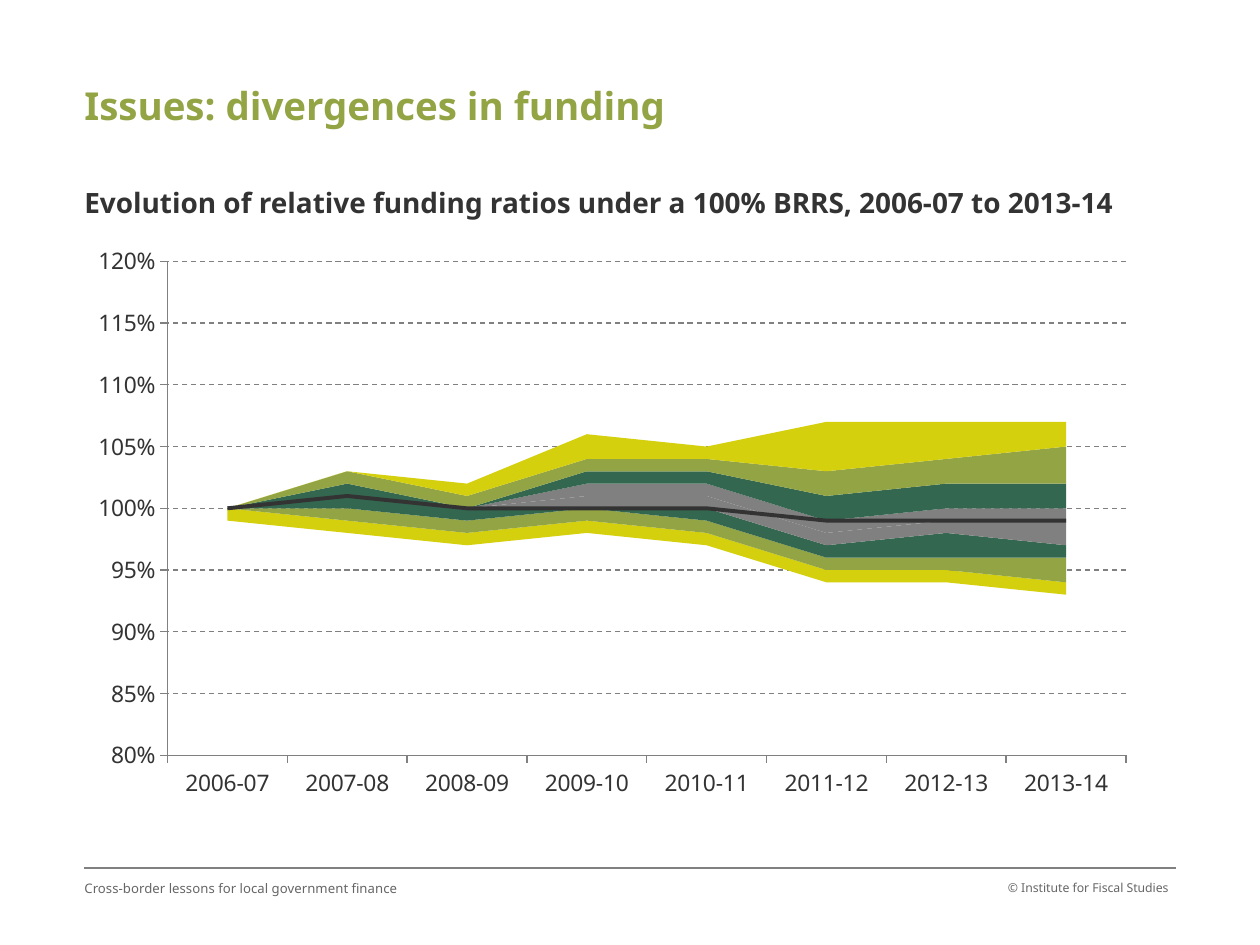
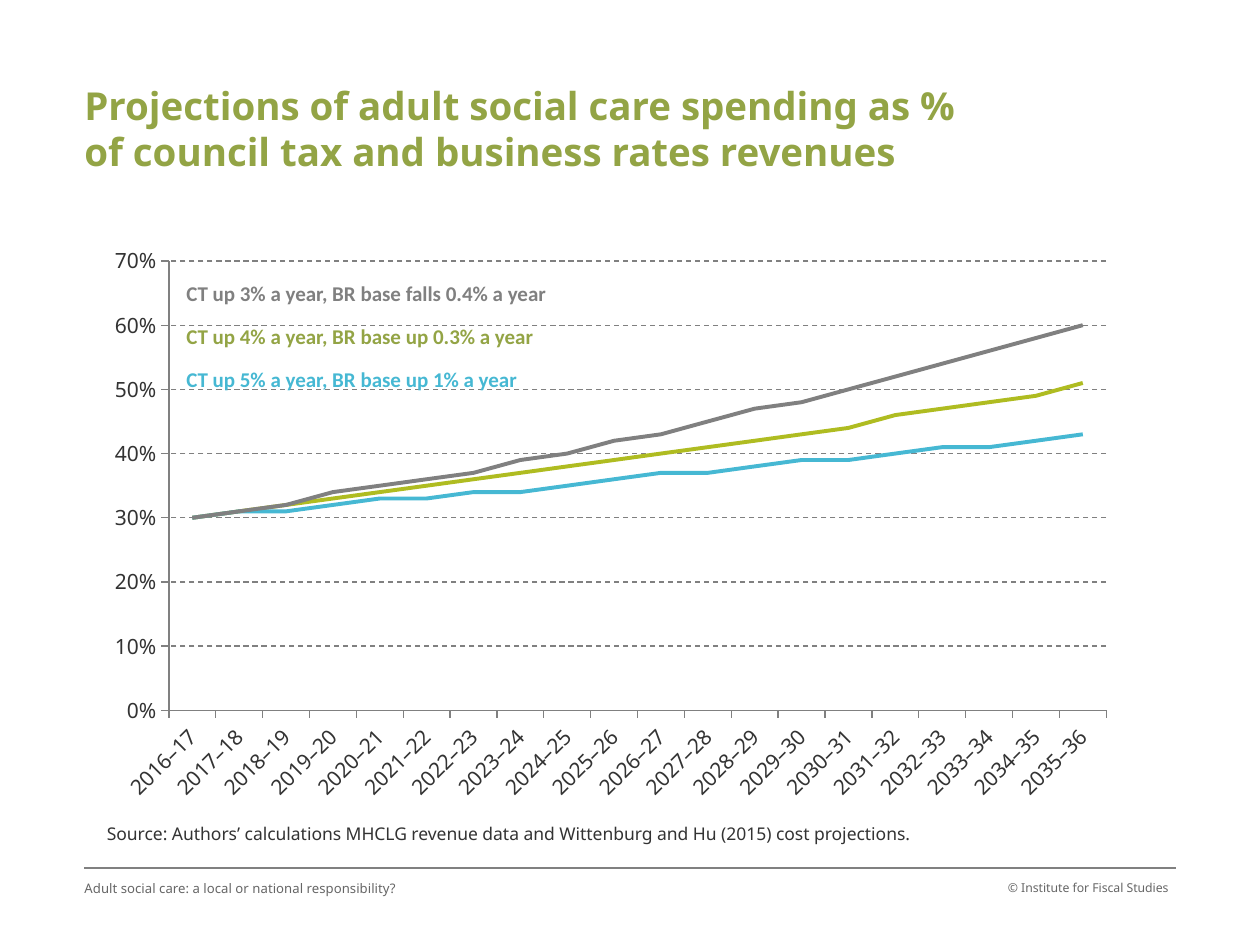
from lxml import etree
from pptx import Presentation
from pptx.chart.data import CategoryChartData
from pptx.dml.color import RGBColor
from pptx.enum.chart import XL_CHART_TYPE, XL_MARKER_STYLE, XL_TICK_MARK
from pptx.enum.dml import MSO_LINE
from pptx.enum.shapes import MSO_CONNECTOR
from pptx.enum.text import MSO_ANCHOR, PP_ALIGN
from pptx.oxml import parse_xml
from pptx.oxml.ns import nsdecls, qn
from pptx.util import Pt

AREA, LINE = XL_CHART_TYPE.AREA_STACKED, XL_CHART_TYPE.LINE
NO_MARKER = XL_MARKER_STYLE.NONE
TICK_OUT = XL_TICK_MARK.OUTSIDE
DASH = MSO_LINE.DASH
STRAIGHT = MSO_CONNECTOR.STRAIGHT
TOP = MSO_ANCHOR.TOP
LEFT, RIGHT = PP_ALIGN.LEFT, PP_ALIGN.RIGHT

OLIVE = RGBColor(0x93, 0xA4, 0x45)
YELLOW = RGBColor(0xD4, 0xD0, 0x0E)
FOREST = RGBColor(0x33, 0x67, 0x50)
GREY = RGBColor(0x80, 0x80, 0x80)
LIME = RGBColor(0xAF, 0xBC, 0x21)
BLUE = RGBColor(0x46, 0xB8, 0xD3)
INK = RGBColor(0x33, 0x33, 0x33)
FOOTER_INK = RGBColor(0x66, 0x66, 0x66)

FONT, KEY_FONT = "Noto Sans", "Calibri"
PAGE_WIDTH, PAGE_HEIGHT = 720, 540
MARGIN = 48.24
CONTENT_WIDTH = PAGE_WIDTH - 2 * MARGIN
NO_INSETS = (0, 0, 0, 0)
BOX_INSETS = (7.2, 3.6, 7.2, 3.6)
SERIES_WEIGHT = 2.25

FUNDING_YEARS = [f"{year}-{(year + 1) % 100:02d}" for year in range(2006, 2014)]
FUNDING_BANDS = [
    (None, [0.99, 0.98, 0.97, 0.98, 0.97, 0.94, 0.94, 0.93]),
    (YELLOW, [0.01] * 8),
    (OLIVE, [0, 0.01, 0.01, 0.01, 0.01, 0.01, 0.01, 0.02]),
    (FOREST, [0, 0.01, 0.01, 0, 0.01, 0.01, 0.02, 0.01]),
    (GREY, [0, 0, 0, 0.01, 0.01, 0.01, 0.01, 0.02]),
    (GREY, [0, 0, 0, 0.01, 0.01, 0.01, 0.01, 0.01]),
    (FOREST, [0, 0.01, 0, 0.01, 0.01, 0.02, 0.02, 0.02]),
    (OLIVE, [0, 0.01, 0.01, 0.01, 0.01, 0.02, 0.02, 0.03]),
    (YELLOW, [0, 0, 0.01, 0.02, 0.01, 0.04, 0.03, 0.02]),
]
FUNDING_MEDIAN = (INK, [1, 1.01, 1, 1, 1, 0.99, 0.99, 0.99])

CARE_YEARS = [f"{year}–{(year + 1) % 100:02d}" for year in range(2016, 2036)]
CARE_PROJECTIONS = [
    (LIME, [0.3, 0.31, 0.32, 0.33, 0.34, 0.35, 0.36, 0.37, 0.38, 0.39,
            0.4, 0.41, 0.42, 0.43, 0.44, 0.46, 0.47, 0.48, 0.49, 0.51]),
    (BLUE, [0.3, 0.31, 0.31, 0.32, 0.33, 0.33, 0.34, 0.34, 0.35, 0.36,
            0.37, 0.37, 0.38, 0.39, 0.39, 0.4, 0.41, 0.41, 0.42, 0.43]),
    (GREY, [0.3, 0.31, 0.32, 0.34, 0.35, 0.36, 0.37, 0.39, 0.4, 0.42,
            0.43, 0.45, 0.47, 0.48, 0.5, 0.52, 0.54, 0.56, 0.58, 0.6]),
]
CARE_KEY = [
    ("CT up 3% a year, BR base falls 0.4% a year", GREY),
    ("CT up 4% a year, BR base up 0.3% a year", OLIVE),
    ("CT up 5% a year, BR base up 1% a year", BLUE),
]


def add_text(page, box, lines, size=10, font=FONT, bold=False, align=LEFT,
             insets=NO_INSETS, space_after=0):
    """Write (text, colour) lines as paragraphs in a text box."""
    frame = page.shapes.add_textbox(*map(Pt, box)).text_frame
    frame.word_wrap = True
    frame.vertical_anchor = TOP
    (frame.margin_left, frame.margin_top,
     frame.margin_right, frame.margin_bottom) = map(Pt, insets)
    for index, (text, colour) in enumerate(lines):
        para = frame.add_paragraph() if index else frame.paragraphs[0]
        para.alignment = align
        para.space_after = Pt(space_after)
        span = para.add_run()
        span.text = text
        span.font.name, span.font.size, span.font.bold = font, Pt(size), bold
        span.font.color.rgb = colour


def add_footer(page, box, text):
    """Draw the rule with the talk title and copyright line below it."""
    left, top, width, height = box
    rule = page.shapes.add_connector(STRAIGHT, Pt(left), Pt(top), Pt(left + width), Pt(top))
    rule.line.color.rgb = GREY
    rule.line.width = Pt(0.75)
    etree.SubElement(rule._element.spPr, qn("a:effectLst"))
    text_top, text_height = top + 7.2, height - 7.2
    add_text(page, (left, text_top, 228, text_height), [(text, FOOTER_INK)], size=7.5)
    add_text(page, (left + width - 125, text_top, 125, text_height),
             [("© Institute for Fiscal Studies", FOOTER_INK)],
             size=7, align=RIGHT, insets=(0, 0, 4, 0))


def add_page(deck, title, footer):
    """Add a blank page with its title and footer."""
    page = deck.slides.add_slide(deck.slide_layouts[6])
    add_text(page, (MARGIN, 46.8, 515, 32), [(title, OLIVE)], size=22, bold=True)
    add_footer(page, (MARGIN, 496, CONTENT_WIDTH, 36), footer)
    return page


def place_points_between_ticks(values_axis):
    """Centre each category between two tick marks."""
    element = values_axis._element
    for crossing in element.findall(qn("c:crossBetween")):
        element.remove(crossing)
    element.find(qn("c:majorUnit")).addprevious(
        parse_xml(f'<c:crossBetween {nsdecls("c")} val="between"/>'))


def add_percent_chart(page, box, kind, years, rows, size, scale, plot_box):
    """Add a chart with a dashed percentage grid and a fixed plot area."""
    data = CategoryChartData(number_format="0%")
    data.categories = years
    for number, (_, values) in enumerate(rows, 1):
        data.add_series(f"Series {number}", values)
    chart = page.shapes.add_chart(kind, *map(Pt, box), data).chart
    chart.has_legend = chart.has_title = False
    chart.font.name, chart.font.size = FONT, Pt(size)
    chart.font.color.rgb = INK
    chart.plots[0].vary_by_categories = False

    values_axis, years_axis = chart.value_axis, chart.category_axis
    values_axis.minimum_scale, values_axis.maximum_scale, values_axis.major_unit = scale
    values_axis.tick_labels.number_format = "0%"
    values_axis.tick_labels.number_format_is_linked = False
    values_axis.has_major_gridlines = True
    years_axis.has_major_gridlines = False
    for axis in (values_axis, years_axis):
        axis.major_tick_mark = TICK_OUT
    grid = values_axis.major_gridlines
    for part in (values_axis, years_axis, grid):
        part.format.line.color.rgb = GREY
        part.format.line.width = Pt(0.75)
    grid.format.line.dash_style = DASH
    place_points_between_ticks(values_axis)

    plot_area = chart._chartSpace.chart.plotArea
    for layout in plot_area.findall(qn("c:layout")):
        plot_area.remove(layout)
    modes = "".join(f'<c:{name}Mode val="edge"/>' for name in "xy")
    sizes = "".join(f'<c:{name} val="{value}"/>' for name, value in zip("xywh", plot_box))
    plot_area.insert(0, parse_xml(
        f'<c:layout {nsdecls("c")}><c:manualLayout><c:layoutTarget val="inner"/>'
        f'{modes}{sizes}</c:manualLayout></c:layout>'))
    return chart


def style_line(series, colour):
    """Draw a series as a plain straight line."""
    series.smooth = False
    series.marker.style = NO_MARKER
    series.format.line.color.rgb = colour
    series.format.line.width = Pt(SERIES_WEIGHT)


def move_last_series_to_line(chart):
    """Turn the last area series into a line on the same axes."""
    area = chart.plots[0]._element
    line = parse_xml(f'<c:lineChart {nsdecls("c")}><c:grouping val="standard"/>'
                     '<c:varyColors val="0"/><c:marker val="1"/></c:lineChart>')
    line.insert(2, area.findall(qn("c:ser"))[-1])
    for axis_id in area.findall(qn("c:axId")):
        etree.SubElement(line, qn("c:axId")).set("val", axis_id.get("val"))
    area.addnext(line)
    return chart.plots[1].series[0]


def add_funding_chart(page, box):
    """Show the funding bands with the median line over them."""
    chart = add_percent_chart(page, box, AREA, FUNDING_YEARS,
                              FUNDING_BANDS + [FUNDING_MEDIAN], 13,
                              (0.8, 1.2, 0.05), (0.087, 0.03, 0.895, 0.873))
    style_line(move_last_series_to_line(chart), FUNDING_MEDIAN[0])
    for series, (colour, _) in zip(chart.plots[0].series, FUNDING_BANDS):
        series.format.line.fill.background()
        if colour is None:
            series.format.fill.background()
        else:
            series.format.fill.solid()
            series.format.fill.fore_color.rgb = colour


def add_care_chart(page, box):
    """Show the three spending projections with their coloured key."""
    left, top, _, _ = box
    chart = add_percent_chart(page, box, LINE, CARE_YEARS, CARE_PROJECTIONS, 12,
                              (0, 0.7, 0.1), (0.072, 0.046, 0.908, 0.777))
    for series, (colour, _) in zip(chart.plots[0].series, CARE_PROJECTIONS):
        style_line(series, colour)
    labels = chart.category_axis.tick_labels
    labels.font.size = Pt(12)
    body = chart.category_axis._element.find(qn("c:txPr")).find(qn("a:bodyPr"))
    body.set("rot", "-2700000")
    add_text(page, (left + 45.4, top + 23, 227, 107), CARE_KEY, size=12,
             font=KEY_FONT, bold=True, insets=BOX_INSETS, space_after=10)


def build_funding_page(deck):
    """Build the page on divergences in funding."""
    page = add_page(deck, "Issues: divergences in funding",
                    "Cross-border lessons for local government finance")
    add_funding_chart(page, (42.5, 139.7, 612, 323.3))
    heading = "Evolution of relative funding ratios under a 100% BRRS, 2006-07 to 2013-14"
    add_text(page, (MARGIN, 105.8, CONTENT_WIDTH, 28), [(heading, INK)], size=16, bold=True)


def build_care_page(deck):
    """Build the page on adult social care spending."""
    page = add_page(
        deck,
        "Projections of adult social care spending as % of council tax and business rates revenues",
        "Adult social care: a local or national responsibility?")
    add_care_chart(page, (54, 134, 590, 330.5))
    source = ("Source: Authors’ calculations MHCLG revenue data and "
              "Wittenburg and Hu (2015) cost projections.")
    add_text(page, (54, 466.6, 482, 19.4), [(source, INK)], insets=BOX_INSETS)


def main():
    """Build and save the deck."""
    deck = Presentation()
    deck.slide_width, deck.slide_height = Pt(PAGE_WIDTH), Pt(PAGE_HEIGHT)
    build_funding_page(deck)
    build_care_page(deck)
    deck.save("out.pptx")


if __name__ == "__main__":
    main()
